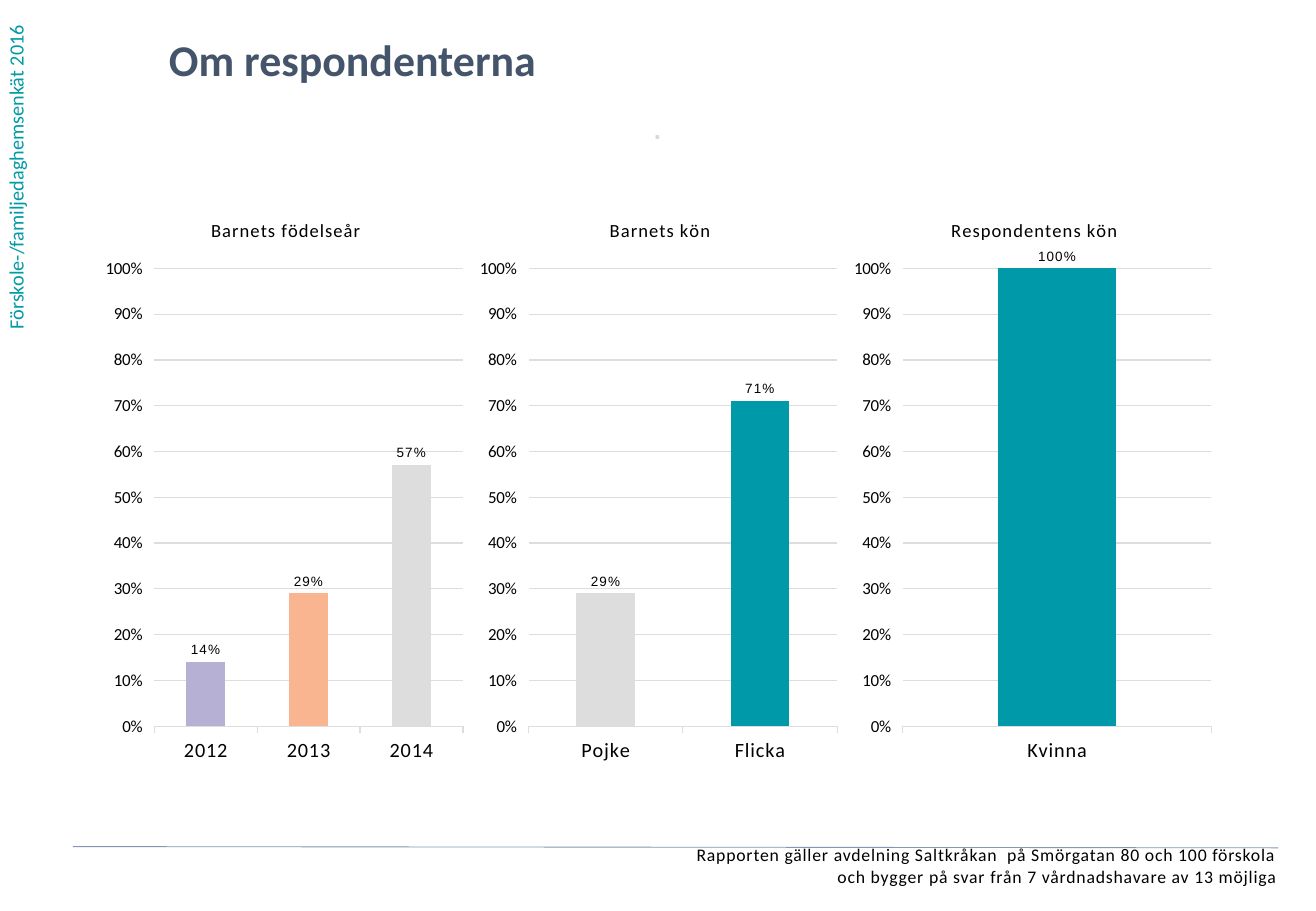
"""Build the slide about the respondents with three column charts."""
from lxml import etree
from pptx import Presentation
from pptx import util as u
from pptx.chart.data import CategoryChartData
from pptx.dml.color import RGBColor
from pptx.enum import chart as ch, shapes, text
from pptx.oxml.ns import qn

TEAL, GREY, PEACH, LILAC = "0099AA", "DDDDDD", "F9B590", "B6B1D4"
PERCENT = "0%;0%"
CHART_W, CHART_H = 308, 476


def rgb(value):
    """Turn a hex string into a colour."""
    return RGBColor.from_string(value)


def set_font(font, size, color="000000", bold=False, name="Calibri"):
    """Format one font."""
    font.size, font.bold, font.name = u.Pt(size), bold, name
    font.color.rgb = rgb(color)


def set_layout(parent, index, x, y, w=None, h=None):
    """Place a chart part by px within its chart."""
    for old in parent.findall(qn("c:layout")):
        parent.remove(old)
    values = {"xMode": "edge", "yMode": "edge", "x": x / CHART_W, "y": y / CHART_H}
    if w:
        values = {"layoutTarget": "inner", **values,
                  "w": w / CHART_W, "h": h / CHART_H}
    layout = etree.Element(qn("c:layout"))
    manual = etree.SubElement(layout, qn("c:manualLayout"))
    for tag, val in values.items():
        etree.SubElement(manual, qn("c:" + tag)).set("val", str(val))
    parent.insert(index, layout)


class Deck:
    """Hold the style and the current slide."""

    def __init__(self, width, height, scale=9144):
        """Start a deck with one title-only slide."""
        self.scale = scale
        self.prs = Presentation()
        self.prs.slide_width, self.prs.slide_height = self.px(width, height)
        self.s = self.prs.slides.add_slide(self.prs.slide_layouts[5])

    def px(self, *lengths):
        """Turn px into EMU."""
        return [u.Emu(n * self.scale) for n in lengths]

    def fill_frame(self, sp, lines, size, color, bold=False, align="LEFT",
                   spacing=0, inset=0):
        """Write lines into a shape run by run."""
        tf = sp.text_frame
        tf.word_wrap, tf.auto_size = True, text.MSO_AUTO_SIZE.NONE
        tf.vertical_anchor = text.MSO_ANCHOR.TOP
        tf.margin_left, tf.margin_right, tf.margin_top, tf.margin_bottom = \
            self.px(2 * inset, 2 * inset, inset, inset)
        p = tf.paragraphs[0]
        p.alignment = text.PP_ALIGN[align]
        for i, line in enumerate(lines):
            if i:
                p.add_line_break()
            r = p.add_run()
            r.text = line
            set_font(r.font, size, color, bold)
            if spacing:
                r._r.get_or_add_rPr().set("spc", str(spacing))

    def title(self, box, line, size, color):
        """Move and format the title placeholder."""
        sp = self.s.shapes.title
        sp.left, sp.top, sp.width, sp.height = self.px(*box)
        self.fill_frame(sp, [line], size, color, bold=True)

    def label(self, box, lines, size, color, vert=None, **style):
        """Add a text box."""
        sp = self.s.shapes.add_textbox(*self.px(*box))
        self.fill_frame(sp, lines, size, color, **style)
        if vert:
            sp.text_frame._txBody.bodyPr.set("vert", vert)

    def line(self, start, end, color, width):
        """Add a straight line."""
        cn = self.s.shapes.add_connector(
            shapes.MSO_CONNECTOR.STRAIGHT, *self.px(*start, *end))
        cn.line.color.rgb, cn.line.width = rgb(color), u.Pt(width)
        etree.SubElement(cn._element.spPr, qn("a:effectLst"))

    def columns(self, left, top, title, title_x, bars):
        """Add a column chart with one coloured bar per category."""
        data = CategoryChartData(number_format=PERCENT)
        data.categories = [name for name, _, _ in bars]
        data.add_series("Series 1", [val for _, val, _ in bars])
        chart = self.s.shapes.add_chart(
            ch.XL_CHART_TYPE.COLUMN_CLUSTERED,
            *self.px(left, top, CHART_W, CHART_H), data).chart
        chart.has_legend = False
        set_font(chart.font, 10)
        chart.has_title = True
        r = chart.chart_title.text_frame.paragraphs[0].add_run()
        r.text = title
        set_font(r.font, 11)
        r._r.get_or_add_rPr().set("spc", "50")
        self.axes(chart)

        plot = chart.plots[0]
        plot.gap_width, plot.vary_by_categories = 162, False
        plot.has_data_labels = True
        labels = plot.data_labels
        labels.show_value = True
        labels.number_format, labels.number_format_is_linked = PERCENT, False
        labels.position = ch.XL_LABEL_POSITION.OUTSIDE_END
        set_font(labels.font, 8, name="Arial")
        series = plot.series[0]
        series.format.fill.solid()
        series.format.fill.fore_color.rgb = rgb(TEAL)
        for i, (_, _, color) in enumerate(bars):
            fmt = series.points[i].format
            fmt.fill.solid()
            fmt.fill.fore_color.rgb = rgb(color)
            fmt.line.fill.background()

        for part in (plot._element, chart.category_axis._element):
            for props in part.iter(qn("a:defRPr")):
                props.set("spc", "50")
        set_layout(chart._chartSpace.chart.plotArea, 0, 48, 61, 254, 377)
        set_layout(chart.chart_title._element, 1, title_x, 16)

    def axes(self, chart):
        """Format both axes, with categories in reverse order."""
        cat, val = chart.category_axis, chart.value_axis
        cat.reverse_order = True
        val.tick_label_position = ch.XL_TICK_LABEL_POSITION.HIGH
        val.minimum_scale, val.maximum_scale, val.major_unit = 0, 1, 0.1
        val.has_major_gridlines = True
        val.format.line.fill.background()
        for line in (cat.format.line, val.major_gridlines.format.line):
            line.color.rgb, line.width = rgb(GREY), u.Pt(0.75)
        for axis, size in ((cat, 12), (val, 10)):
            axis.major_tick_mark = ch.XL_TICK_MARK.OUTSIDE
            set_font(axis.tick_labels.font, size)
        val.tick_labels.number_format = PERCENT
        val.tick_labels.number_format_is_linked = False


def main():
    """Build and save the slide."""
    deck = Deck(1083, 750)
    deck.title((139, 27, 834, 57), "Om respondenterna", 26, "44546A")
    deck.label((-2, 0, 40, 281), ["Förskole-/familjedaghemsenkät 2016"], 12,
               "009BA4", vert="vert270", inset=5)
    deck.label((12, 695, 1039, 43),
               ["Rapporten gäller avdelning Saltkråkan  på Smörgatan 80 och 100 förskola",
                "och bygger på svar från 7 vårdnadshavare av 13 möjliga"],
               10.5, "000000", align="RIGHT", spacing=50)
    deck.label((387, 102, 308, 39), ["⋅"], 12, "D2D9E2", bold=True,
               align="CENTER", spacing=50)
    charts = [
        ("Barnets födelseår", 92, [("2014", 0.57, GREY), ("2013", 0.29, PEACH),
                                   ("2012", 0.14, LILAC)]),
        ("Barnets kön", 112, [("Flicka", 0.71, TEAL), ("Pojke", 0.29, GREY)]),
        ("Respondentens kön", 85, [("Kvinna", 1, TEAL)]),
    ]
    for i, (title, title_x, bars) in enumerate(charts):
        deck.columns(79 + CHART_W * i, 160, title, title_x, bars)
    deck.line((60, 697), (1052, 698), "8497B0", 0.5)
    deck.prs.save("out.pptx")


if __name__ == "__main__":
    main()
